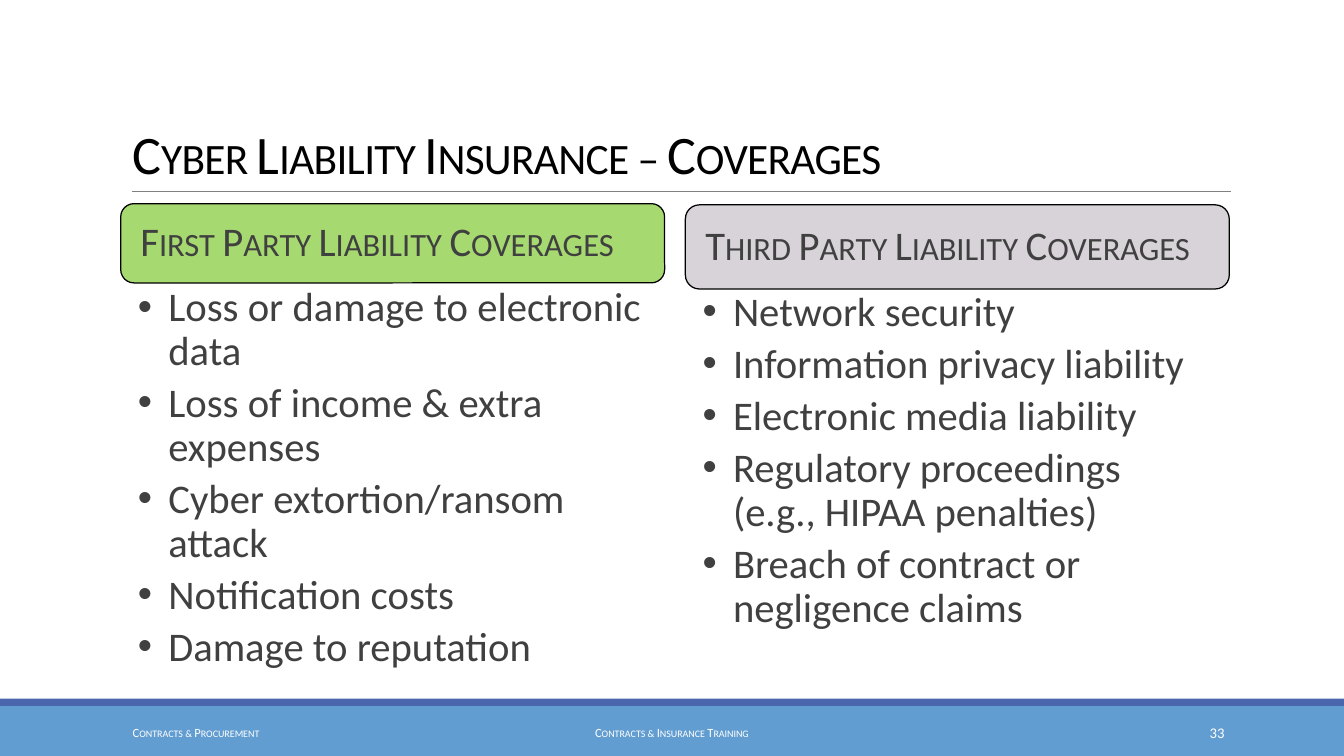
from lxml import etree
from pptx import Presentation
from pptx.dml.color import RGBColor
from pptx.enum import shapes, text
from pptx.oxml import ns
from pptx.util import Inches, Pt

FONT = "Calibri"
WHITE, BLACK, DARK_GRAY = "FFFFFF", "000000", "404040"
COLUMN_WIDTH = 4.46

FIRST_PARTY = [
    "Loss or damage to electronic data",
    "Loss of income & extra expenses",
    "Cyber extortion/ransom attack",
    "Notification costs",
    "Damage to reputation",
]
THIRD_PARTY = [
    "Network security",
    "Information privacy liability",
    "Electronic media liability",
    "Regulatory proceedings (e.g., HIPAA penalties)",
    "Breach of contract or negligence claims",
]


def color(value):
    return RGBColor.from_string(value)


def place(shape, left, top, width, height):
    shape.left, shape.top = Inches(left), Inches(top)
    shape.width, shape.height = Inches(width), Inches(height)


def set_frame(frame, anchor, left=0.1, top=0.05, right=0.1, bottom=0.05):
    frame.word_wrap = True
    frame.auto_size = text.MSO_AUTO_SIZE.NONE
    frame.vertical_anchor = anchor
    frame.margin_left, frame.margin_right = Inches(left), Inches(right)
    frame.margin_top, frame.margin_bottom = Inches(top), Inches(bottom)


def format_paragraph(paragraph, size, font_color, align=text.PP_ALIGN.LEFT,
                     small_caps=False, line_spacing=1.0):
    paragraph.alignment = align
    paragraph.line_spacing = line_spacing
    paragraph.space_before = Pt(0)
    font = paragraph.font
    font.name, font.size = FONT, Pt(size)
    font.color.rgb = color(font_color)
    if small_caps:
        font._element.set("cap", "small")


def add_bullet(paragraph):
    properties = paragraph._p.get_or_add_pPr()
    properties.set("marL", str(Inches(0.25)))
    properties.set("indent", str(Inches(-0.25)))
    etree.SubElement(properties, ns.qn("a:buChar")).set("char", "•")


def add_box(slide, kind, position, fill, line=None):
    shape = slide.shapes.add_shape(kind, *map(Inches, position))
    shape.shadow.inherit = False
    shape.fill.solid()
    shape.fill.fore_color.rgb = color(fill)
    if line:
        shape.line.color.rgb = color(line)
        shape.line.width = Pt(0.75)
    else:
        shape.line.fill.background()
    return shape


def add_rule(slide, left, right, top):
    rule = slide.shapes.add_connector(
        shapes.MSO_CONNECTOR.STRAIGHT,
        Inches(left), Inches(top), Inches(right), Inches(top))
    rule.line.color.rgb = color("808080")
    rule.line.width = Pt(0.5)
    etree.SubElement(rule._element.spPr, ns.qn("a:effectLst"))


def set_title(slide, wording):
    title = slide.shapes.title
    place(title, 0.99, 0.26, 9.09, 1.31)
    set_frame(title.text_frame, text.MSO_ANCHOR.BOTTOM)
    title.text_frame.text = wording
    paragraph = title.text_frame.paragraphs[0]
    format_paragraph(paragraph, 32, BLACK, small_caps=True, line_spacing=0.85)
    paragraph.font._element.set("spc", "-40")


def add_heading(slide, wording, left, top, height, fill):
    heading = add_box(slide, shapes.MSO_SHAPE.ROUNDED_RECTANGLE,
                      (left, top, COLUMN_WIDTH, height), fill, BLACK)
    set_frame(heading.text_frame, text.MSO_ANCHOR.MIDDLE, left=0.13)
    heading.text_frame.text = wording
    format_paragraph(heading.text_frame.paragraphs[0], 24, DARK_GRAY,
                     small_caps=True, line_spacing=0.9)


def fill_list(placeholder, items, left, top, height):
    place(placeholder, left, top, COLUMN_WIDTH, height)
    frame = placeholder.text_frame
    set_frame(frame, text.MSO_ANCHOR.TOP, 0.14, 0.03, 0.19, 0.03)
    frame.text = "\n".join(items)
    for paragraph in frame.paragraphs:
        add_bullet(paragraph)
        format_paragraph(paragraph, 24, DARK_GRAY, line_spacing=0.9)
        paragraph.space_after = Pt(4.8)


def add_footer(slide, wording, left, width, align, size=7.4, small_caps=True):
    footer = slide.shapes.add_textbox(
        Inches(left), Inches(5.84), Inches(width), Inches(0.33))
    set_frame(footer.text_frame, text.MSO_ANCHOR.MIDDLE)
    footer.text_frame.text = wording
    format_paragraph(footer.text_frame.paragraphs[0], size, WHITE, align, small_caps)


def main():
    presentation = Presentation()
    presentation.slide_width = Inches(11.02)
    presentation.slide_height = Inches(6.2)
    slide = presentation.slides.add_slide(presentation.slide_layouts[3])

    # Bottom bands and title
    rectangle = shapes.MSO_SHAPE.RECTANGLE
    add_box(slide, rectangle, (0, 5.79, 11.02, 0.41), "629DD1")
    add_box(slide, rectangle, (0, 5.73, 11.02, 0.06), "4A66AC")
    add_rule(slide, 1.08, 10.09, 1.57)
    set_title(slide, "Cyber Liability Insurance – Coverages")

    # Coverage columns
    add_heading(slide, "First Party Liability Coverages", 0.99, 1.67, 0.65, "A7D971")
    fill_list(slide.placeholders[1], FIRST_PARTY, 0.99, 2.32, 3.36)
    add_heading(slide, "Third Party Liability Coverages", 5.62, 1.68, 0.69, "D8D3D9")
    fill_list(slide.placeholders[2], THIRD_PARTY, 5.62, 2.36, 2.98)

    # Footer
    add_footer(slide, "Contracts & Procurement", 0.99, 2.23, text.PP_ALIGN.LEFT)
    add_footer(slide, "Contracts & Insurance Training", 3.33, 4.36,
               text.PP_ALIGN.CENTER)
    add_footer(slide, "33", 8.95, 1.19, text.PP_ALIGN.RIGHT, 8.7, False)

    presentation.save("out.pptx")


if __name__ == "__main__":
    main()
